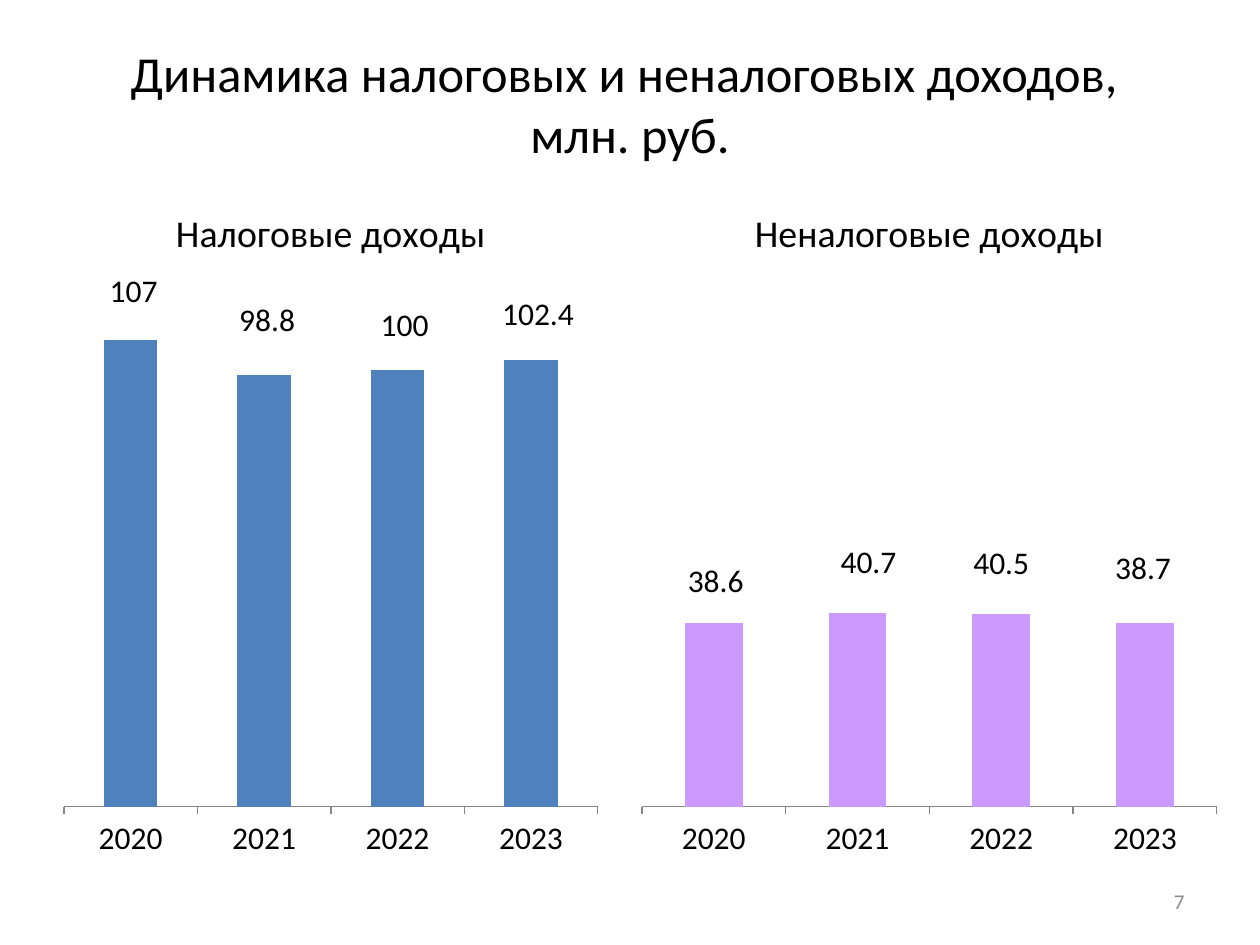
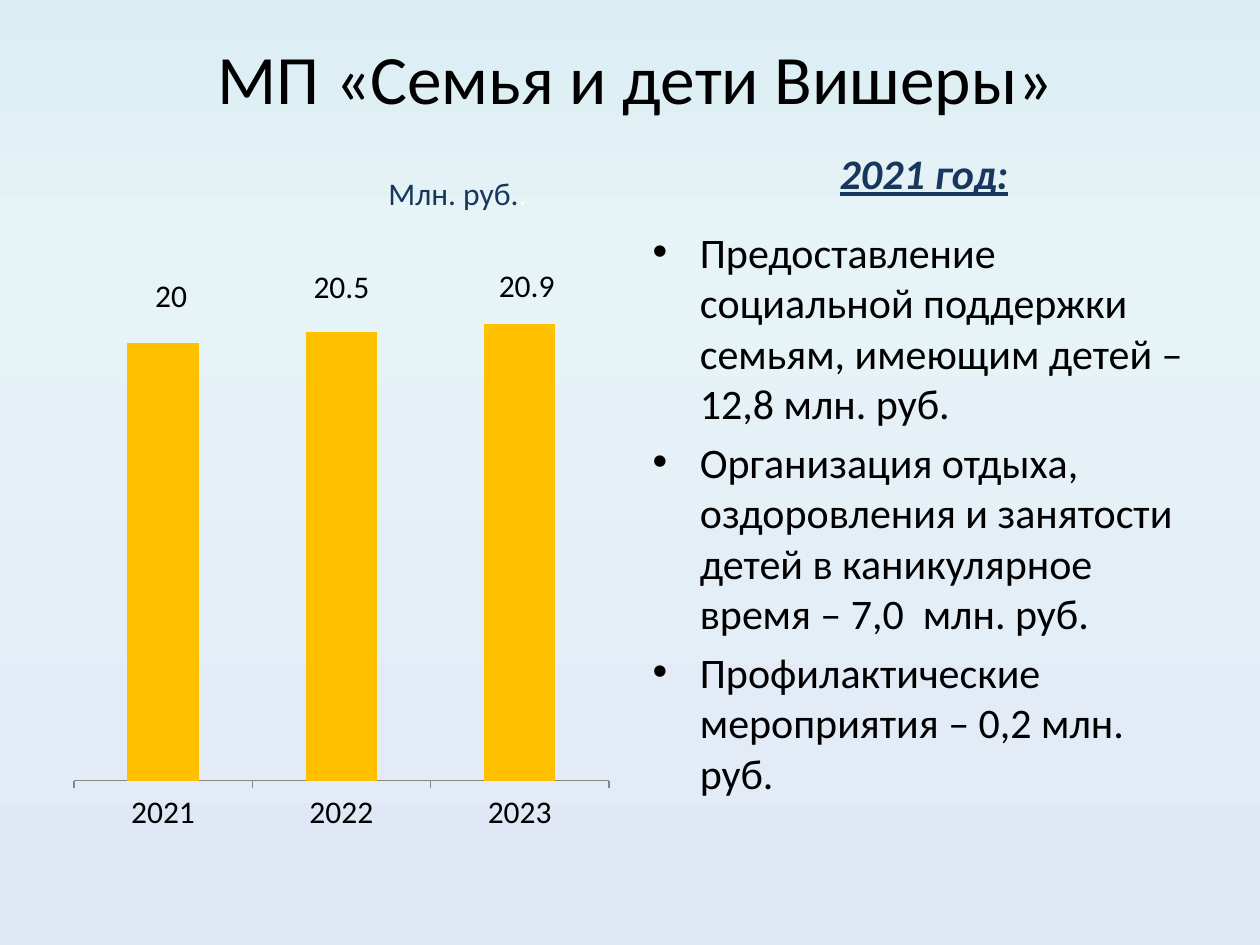
"""Build two budget slides: revenue dynamics and a family support programme."""
from dataclasses import dataclass

from lxml.etree import SubElement
from pptx import Presentation
from pptx.chart.data import CategoryChartData
from pptx.dml.color import RGBColor
from pptx.enum.chart import XL_CHART_TYPE as ChartType
from pptx.enum.chart import XL_LABEL_POSITION as LabelPosition
from pptx.enum.chart import XL_TICK_LABEL_POSITION as TickLabels
from pptx.enum.chart import XL_TICK_MARK as TickMark
from pptx.enum.text import MSO_ANCHOR as Anchor
from pptx.enum.text import MSO_AUTO_SIZE as AutoSize
from pptx.enum.text import PP_ALIGN as Align
from pptx.oxml import parse_xml
from pptx.oxml.ns import nsdecls, qn
from pptx.util import Emu, Pt

EMU_PER_PX = 914400 / 126
FONT = "Calibri"
BLACK = RGBColor(0, 0, 0)
WHITE = RGBColor(0xFF, 0xFF, 0xFF)
GREY = RGBColor(0x8C, 0x8C, 0x8C)
AXIS_GREY = RGBColor(0x86, 0x86, 0x86)
NAVY = RGBColor(0x17, 0x37, 0x5E)
TAX_BLUE = RGBColor(0x4F, 0x81, 0xBD)
NON_TAX_VIOLET = RGBColor(0xCC, 0x99, 0xFF)
PROGRAMME_GOLD = RGBColor(0xFF, 0xC0, 0x00)
SKY = (
    (0, RGBColor(0xDB, 0xEE, 0xF4)),
    (25, RGBColor(0xE6, 0xF3, 0xF7)),
    (100, RGBColor(0xE1, 0xE8, 0xF5)),
)


@dataclass(frozen=True)
class Box:
    left: int
    top: int
    width: int
    height: int

    def emu(self) -> tuple:
        return tuple(px(n) for n in (self.left, self.top, self.width, self.height))


@dataclass(frozen=True)
class Columns:
    frame: Box
    plot: Box
    years: tuple
    millions: tuple
    label_shifts: tuple
    maximum: int
    color: RGBColor
    heading: str = ""
    heading_corner: tuple = (0, 0)
    stacked: bool = False


REVENUE_YEARS = ("2020", "2021", "2022", "2023")
REVENUE_CHARTS = (
    Columns(Box(53, 179, 557, 693), Box(64, 283, 534, 524), REVENUE_YEARS,
            (107, 98.8, 100, 102.4), ((3, -24), (3, -31), (7, -21), (7, -22)),
            120, TAX_BLUE, "Налоговые доходы", (169, 199)),
    Columns(Box(630, 179, 598, 693), Box(642, 283, 575, 524), REVENUE_YEARS,
            (38.6, 40.7, 40.5, 38.7), ((2, -18), (11, -27), (0, -27), (-2, -30)),
            110, NON_TAX_VIOLET, "Неналоговые доходы", (748, 199)),
)
PROGRAMME_CHART = Columns(
    Box(63, 220, 557, 624), Box(74, 234, 535, 547), ("2021", "2022", "2023"),
    (20, 20.5, 20.9), ((8, -266), (0, -269), (7, -266)),
    25, PROGRAMME_GOLD, stacked=True)
MEASURES = (
    "Предоставление социальной поддержки семьям, имеющим детей – 12,8 млн. руб.",
    "Организация отдыха, оздоровления и занятости детей в каникулярное время – 7,0  млн. руб.",
    "Профилактические мероприятия – 0,2 млн. руб.",
)


def px(length: int) -> Emu:
    return Emu(round(length * EMU_PER_PX))


def style(font, size: float, color: RGBColor) -> None:
    font.name = FONT
    font.size = Pt(size)
    font.color.rgb = color


def move(shape, box: Box) -> None:
    shape.left, shape.top, shape.width, shape.height = box.emu()


def set_title(slide, lines: tuple, box: Box, size: float) -> None:
    title = slide.shapes.title
    move(title, box)
    title.text_frame.auto_size = AutoSize.NONE
    paragraph = title.text_frame.paragraphs[0]
    for number, line in enumerate(lines):
        if number:
            paragraph.add_line_break()
        paragraph.add_run().text = line
    style(paragraph.font, size, BLACK)


def add_caption(slide, text: str, box: Box, size: float, color: RGBColor, align: Align):
    frame = slide.shapes.add_textbox(*box.emu()).text_frame
    frame.word_wrap = True
    frame.vertical_anchor = Anchor.MIDDLE
    paragraph = frame.paragraphs[0]
    paragraph.alignment = align
    paragraph.add_run().text = text
    style(paragraph.font, size, color)
    return paragraph


def set_layout(parent, index: int, modes: dict, fractions: dict) -> None:
    for previous in parent.findall(qn("c:layout")):
        parent.remove(previous)
    layout = parse_xml(f"<c:layout {nsdecls('c')}><c:manualLayout/></c:layout>")
    for tag, value in {**modes, **fractions}.items():
        shown = value if isinstance(value, str) else f"{value:.4f}"
        SubElement(layout[0], qn(f"c:{tag}"), val=shown)
    parent.insert(index, layout)


def place_labels(chart, columns: Columns) -> None:
    amounts = chart.plots[0].series[0]
    amounts.data_labels.show_value = True
    for point in range(len(columns.millions)):
        amounts.points[point].data_label.position = (
            LabelPosition.CENTER if columns.stacked else LabelPosition.OUTSIDE_END)
    labels = list(chart.element.iter(qn("c:dLbl")))
    for label, (across, down) in zip(labels, columns.label_shifts):
        set_layout(label, 1, {}, {"x": across / columns.frame.width,
                                  "y": down / columns.frame.height})
    for group in chart.element.iter(qn("c:dLbls")):
        leader_lines = group.find(qn("c:showLeaderLines"))
        if leader_lines is None:
            leader_lines = SubElement(group, qn("c:showLeaderLines"))
        leader_lines.set("val", "0")


def add_columns(slide, columns: Columns) -> None:
    data = CategoryChartData()
    data.categories = columns.years
    data.add_series("Series 1", columns.millions)
    kind = ChartType.COLUMN_STACKED if columns.stacked else ChartType.COLUMN_CLUSTERED
    chart = slide.shapes.add_chart(kind, *columns.frame.emu(), data).chart
    style(chart.font, 18, BLACK)
    chart.has_legend = False
    chart.has_title = bool(columns.heading)

    years, amounts = chart.category_axis, chart.value_axis
    years.major_tick_mark = TickMark.OUTSIDE
    years.tick_label_position = TickLabels.LOW
    years.has_major_gridlines = False
    years.format.line.color.rgb = AXIS_GREY
    amounts.visible = False
    amounts.has_major_gridlines = False
    amounts.minimum_scale = 0
    amounts.maximum_scale = columns.maximum

    bars = chart.plots[0]
    bars.vary_by_categories = False
    bars.gap_width = 150
    bars.overlap = 100 if columns.stacked else 0
    bars.series[0].format.fill.solid()
    bars.series[0].format.fill.fore_color.rgb = columns.color
    place_labels(chart, columns)

    frame, plot = columns.frame, columns.plot
    edges = {"xMode": "edge", "yMode": "edge"}
    set_layout(chart.element.find(f".//{qn('c:plotArea')}"), 0,
               {"layoutTarget": "inner", **edges},
               {"x": (plot.left - frame.left) / frame.width,
                "y": (plot.top - frame.top) / frame.height,
                "w": plot.width / frame.width,
                "h": plot.height / frame.height})

    if columns.heading:
        heading = chart.chart_title.text_frame
        heading.text = columns.heading
        style(heading.paragraphs[0].font, 21.6, BLACK)
        heading.paragraphs[0].font.bold = False
        chart.chart_title.include_in_layout = False
        left, top = columns.heading_corner
        set_layout(chart.element.find(f".//{qn('c:title')}"), 1, edges,
                   {"x": (left - frame.left) / frame.width,
                    "y": (top - frame.top) / frame.height})


def paint_sky(slide) -> None:
    fill = slide.background.fill
    fill.gradient()
    fill.gradient_angle = 270
    stops = slide.element.find(f".//{qn('a:gsLst')}")
    for stop in list(stops):
        stops.remove(stop)
    for percent, color in SKY:
        stop = SubElement(stops, qn("a:gs"), pos=str(percent * 1000))
        SubElement(stop, qn("a:srgbClr"), val=str(color))


def build_revenue(deck) -> None:
    slide = deck.slides.add_slide(deck.slide_layouts[5])
    set_title(slide, ("Динамика налоговых и неналоговых доходов, ", "млн. руб."),
              Box(63, 38, 1134, 130), 28.8)
    for columns in REVENUE_CHARTS:
        add_columns(slide, columns)
    add_caption(slide, "7", Box(903, 876, 294, 50), 12, GREY, Align.RIGHT)


def build_programme(deck) -> None:
    slide = deck.slides.add_slide(deck.slide_layouts[1])
    paint_sky(slide)
    set_title(slide, ("МП «Семья и дети Вишеры»",), Box(32, 38, 1207, 78), 39.6)
    add_columns(slide, PROGRAMME_CHART)

    measures = slide.placeholders[1]
    move(measures, Box(640, 220, 557, 624))
    frame = measures.text_frame
    frame.auto_size = AutoSize.NONE
    for number, measure in enumerate(MEASURES):
        paragraph = frame.add_paragraph() if number else frame.paragraphs[0]
        paragraph.text = measure
        style(paragraph.font, 24, BLACK)

    year = add_caption(slide, "2021 год:", Box(819, 136, 210, 73), 24, NAVY, Align.CENTER)
    year.font.bold = year.font.italic = year.font.underline = True
    unit = add_caption(slide, "Млн. руб.", Box(368, 174, 179, 37), 18, NAVY, Align.CENTER)
    full_stop = unit.add_run()
    full_stop.text = "."
    full_stop.font.color.rgb = WHITE


def main() -> None:
    deck = Presentation()
    deck.slide_width, deck.slide_height = px(1260), px(945)
    build_revenue(deck)
    build_programme(deck)
    deck.save("out.pptx")


if __name__ == "__main__":
    main()
